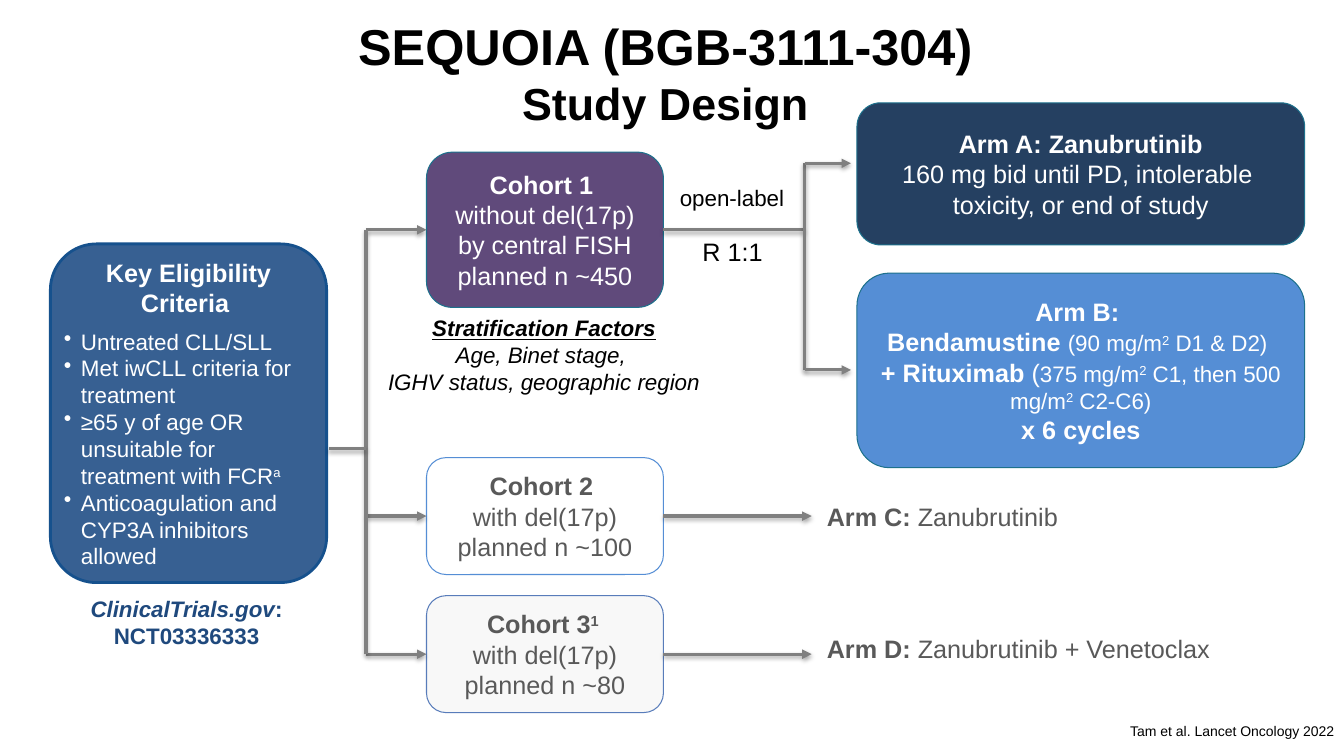
from copy import deepcopy
from lxml import etree
from pptx import Presentation
from pptx import util as u
from pptx.dml.color import RGBColor
from pptx.enum import shapes, text
from pptx.oxml import parse_xml
from pptx.oxml.ns import nsdecls, qn

W, H = 13.33, 7.5
COLORS = dict(black="000000", white="FFFFFF", gray="595959", line="808080", purple="604A7B",
              teal="1D718C", blue="376092", edge="16518D", sky="558ED5", steel="587CBA",
              pale="F2F2F2", navy="254061", link="1F497D")
ALIGN = dict(c=text.PP_ALIGN.CENTER, l=text.PP_ALIGN.LEFT, r=text.PP_ALIGN.RIGHT)
TOP, MIDDLE = text.MSO_ANCHOR.TOP, text.MSO_ANCHOR.MIDDLE
B = dict(bold=True)
S = dict(size=16)
SUP = dict(size=16, sup=True)

# Columns and rows of the diagram, in inches
COHORT_X, COHORT_W, COHORT_H = 4.23, 2.35, 1.16
ARM_X, ARM_W = 8.5, 4.44
TRUNK_X, FORK_X = 3.63, 7.98
ARM_LABEL_X = 8.15
ENTRY_Y = 4.45
SPLIT_YS = 1.62, 3.67

# name: (box, fill, opacity %, line, line width, text colour, runs)
BOXES = {
    "cohort 1": ((COHORT_X, 1.51, COHORT_W, 1.54), "purple", 100, "teal", "white", [
        ("Cohort 1 \n", B), ("without del(17p) by central FISH\nplanned n ~450", {})]),
    "cohort 2": ((COHORT_X, 4.54, COHORT_W, COHORT_H), None, 100, "sky", "gray", [
        ("Cohort 2 \n", B), ("with del(17p)\nplanned n ~100", {})]),
    "cohort 3": ((COHORT_X, 5.91, COHORT_W, COHORT_H), "pale", 48, "steel", "gray", [
        ("Cohort 3", B), ("1 \n", dict(bold=True, sup=True)),
        ("with del(17p)\nplanned n ~80", {})]),
    "arm A": ((ARM_X, 1.02, ARM_W, 1.41), "navy", 100, "teal", "white", [
        ("Arm A: Zanubrutinib\n", B),
        ("160 mg bid until PD, intolerable \ntoxicity, or end of study", {})]),
    "arm B": ((ARM_X, 2.71, ARM_W, 1.93), "sky", 100, "teal", "white", [
        ("Arm B: \nBendamustine ", B), ("(90 mg/m", S), ("2", SUP), (" D1 & D2)", S), (" \n", {}),
        ("+ Rituximab ", B), ("(", {}), ("375 mg/m", S), ("2", SUP),
        (" C1, then 500 mg/m", S), ("2", SUP), (" C2-C6)\n", S), ("x 6 cycles", B)]),
}
ELIGIBILITY_BOX = (0.5, 2.42, 2.74, 3.36)
ELIGIBILITY_HEAD = [("Key Eligibility Criteria ", B)]
CRITERIA = [
    [("Untreated CLL/SLL", S)],
    [("Met iwCLL criteria for treatment", S)],
    [("≥65 y of age OR unsuitable for treatment with FCR", S), ("a", SUP)],
    [("Anticoagulation and CYP3A inhibitors allowed", S)],
]
EMPH = dict(size=16, italic=True)
# (box, alignment, anchor, insets, colour, runs)
WIDE, TIGHT = (0.1, 0.05), (0.05, 0.05)
LABELS = [
    ((0.6, 0.33, 12, 0.78), "c", MIDDLE, WIDE, "black", [
        ("SEQUOIA (BGB-3111-304)\n", dict(size=36, bold=True)),
        ("Study Design", dict(size=32, bold=True))]),
    ((0.22, 7.12, 13.11, 0.27), "r", TOP, WIDE, "black", [
        ("Tam et al. Lancet Oncology 2022", dict(size=10))]),
    ((6.49, 1.78, 1.54, 0.46), "c", TOP, WIDE, "black", [("open-label", S)]),
    ((6.77, 2.3, 0.99, 0.5), "c", TOP, WIDE, "black", [("R 1:1", {})]),
    ((ARM_LABEL_X, 4.56, 3.72, 1.13), "l", MIDDLE, TIGHT, "gray", [
        ("Arm C: ", B), ("Zanubrutinib", {})]),
    ((ARM_LABEL_X, 6.23, 4.78, 0.61), "l", TOP, TIGHT, "gray", [
        ("Arm D: ", B), ("Zanubrutinib + Venetoclax", {})]),
    ((0.59, 5.86, 2.52, 0.8), "c", TOP, WIDE, "link", [
        ("ClinicalTrials.gov", EMPH | B), (": NCT03336333", S | B)]),
    ((3.69, 3.07, 3.41, 1.13), "c", TOP, WIDE, "black", [
        ("Stratification Factors\n", EMPH | B | dict(underline=True)),
        ("Age, Binet stage, \nIGHV status, geographic region", EMPH)]),
]
SHADOW = (f'<a:effectLst {nsdecls("a")}><a:outerShdw blurRad="40000" dist="23000" dir="5400000" '
          'rotWithShape="0"><a:srgbClr val="000000"><a:alpha val="35000"/></a:srgbClr>'
          '</a:outerShdw></a:effectLst>')


def rgb(name):
    return RGBColor.from_string(COLORS[name])


def inches(values):
    return [u.Inches(v) for v in values]


def write(p, runs, color, align="c"):
    """Fill a paragraph with formatted runs; a newline becomes a line break."""
    p.alignment = ALIGN[align]
    for words, fmt in runs:
        for n, piece in enumerate(words.split("\n")):
            if n:
                p.add_line_break()
                p._p[-1].append(deepcopy(r._r.rPr))
            if not piece:
                continue
            r = p.add_run()
            r.text = piece
            r.font.name, r.font.color.rgb = "Arial", rgb(color)
            style = dict(size=18, bold=False) | fmt
            if style.pop("sup", False):
                r._r.get_or_add_rPr().set("baseline", "30000")
            style["size"] = u.Pt(style["size"])
            for key, value in style.items():
                setattr(r.font, key, value)


def frame(sp, anchor, insets):
    tf = sp.text_frame
    tf.word_wrap, tf.vertical_anchor = True, anchor
    tf.margin_left = tf.margin_right = u.Inches(insets[0])
    tf.margin_top = tf.margin_bottom = u.Inches(insets[1])
    return tf


def rounded_box(slide, box, fill, line, width=0.75, opacity=100):
    sp = slide.shapes.add_shape(shapes.MSO_SHAPE.ROUNDED_RECTANGLE, *inches(box))
    sp.shadow.inherit = False
    if fill:
        sp.fill.solid()
        sp.fill.fore_color.rgb = rgb(fill)
    else:
        sp.fill.background()
    if opacity < 100:
        clr = sp._element.spPr.find(qn("a:solidFill"))[0]
        etree.SubElement(clr, qn("a:alpha")).set("val", str(opacity * 1000))
    sp.line.color.rgb, sp.line.width = rgb(line), u.Pt(width)
    return sp


def connect(slide, start, end, arrow=False, source=None, target=None):
    """Draw a line, joined to the right of source or the left of target."""
    c = slide.shapes.add_connector(shapes.MSO_CONNECTOR.STRAIGHT, *inches(start + end))
    if source:
        c.begin_connect(source, 3)
    if target:
        c.end_connect(target, 1)
    c.line.color.rgb, c.line.width = rgb("line"), u.Pt(2.25)
    if arrow:
        etree.SubElement(c.line._get_or_add_ln(), qn("a:tailEnd")).set("type", "triangle")
    c._element.spPr.append(parse_xml(SHADOW))


def add_eligibility(slide):
    tf = frame(rounded_box(slide, ELIGIBILITY_BOX, "blue", "edge", 2), TOP, (0, 0))
    write(tf.paragraphs[0], ELIGIBILITY_HEAD, "white")
    for n, runs in enumerate(CRITERIA):
        p = tf.add_paragraph()
        pPr = p._p.get_or_add_pPr()
        pPr.set("marL", str(u.Inches(0.17)))
        pPr.set("indent", str(-u.Inches(0.17)))
        etree.SubElement(pPr, qn("a:buChar")).set("char", "•")
        if n == 0:
            p.space_before = u.Pt(7)
        write(p, runs, "white", "l")


def main():
    prs = Presentation()
    prs.slide_width, prs.slide_height = inches((W, H))
    slide = prs.slides.add_slide(prs.slide_layouts[6])

    sps = {}
    for name, (box, fill, opacity, line, color, runs) in BOXES.items():
        sps[name] = rounded_box(slide, box, fill, line, opacity=opacity)
        write(frame(sps[name], MIDDLE, TIGHT).paragraphs[0], runs, color)
    add_eligibility(slide)
    for box, align, anchor, insets, color, runs in LABELS:
        sp = slide.shapes.add_textbox(*inches(box))
        write(frame(sp, anchor, insets).paragraphs[0], runs, color, align)

    cohorts = ["cohort 1", "cohort 2", "cohort 3"]
    mids = [BOXES[k][0][1] + BOXES[k][0][3] / 2 for k in cohorts]
    right = COHORT_X + COHORT_W
    for n, (name, y) in enumerate(zip(cohorts, mids)):
        connect(slide, (TRUNK_X, y), (COHORT_X, y), True, target=sps[name])
        connect(slide, (right, y), (FORK_X if n == 0 else 8.05, y), n > 0, source=sps[name])
    for y in (mids[0], mids[-1]):
        connect(slide, (TRUNK_X, y), (TRUNK_X, ENTRY_Y))
    connect(slide, (TRUNK_X, ENTRY_Y), (3.26, ENTRY_Y))
    connect(slide, (FORK_X, SPLIT_YS[0]), (FORK_X, SPLIT_YS[1]))
    for y in SPLIT_YS:
        connect(slide, (FORK_X, y), (8.44, y), True)
    prs.save("out.pptx")


if __name__ == "__main__":
    main()
